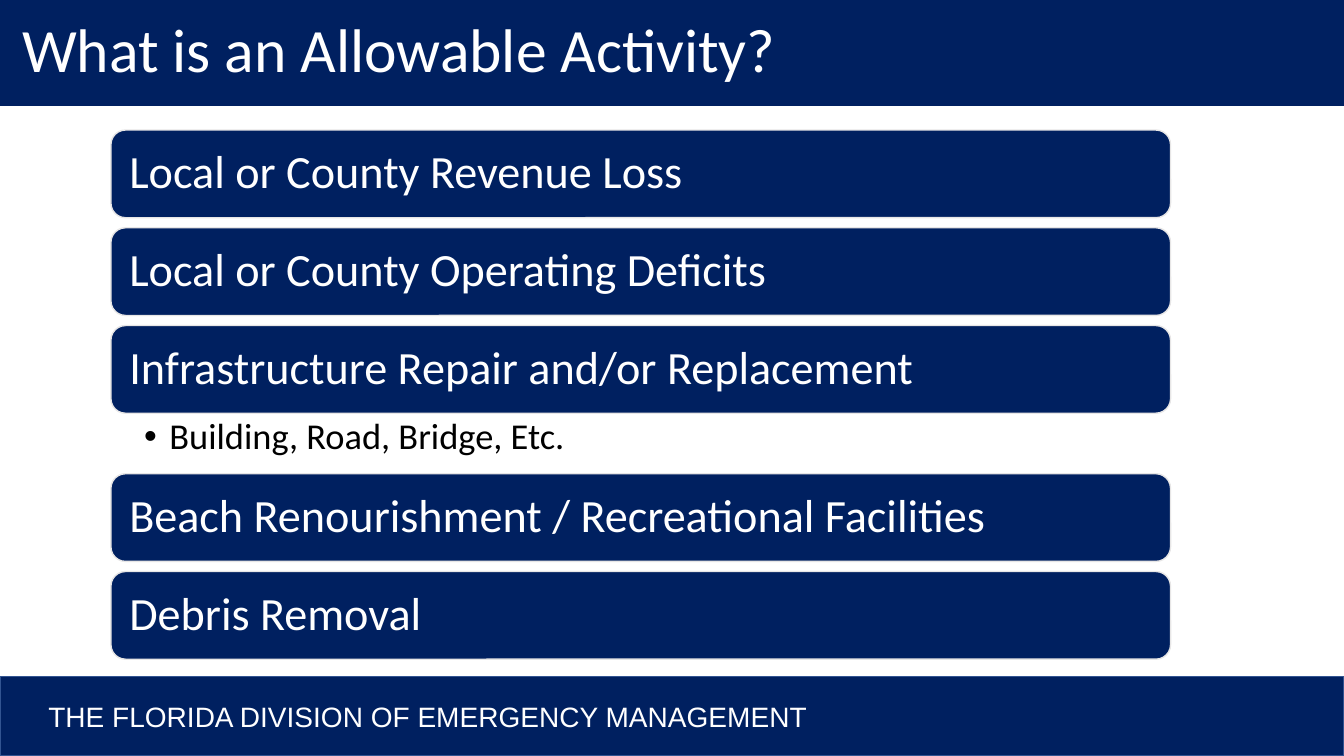
from lxml import etree
from pptx import Presentation
from pptx import util as u
from pptx.dml import color
from pptx.enum import shapes, text
from pptx.oxml import ns


class ActivityPage:
    """Holds the style and the current slide, and draws each kind of element."""

    colors = {"navy": "002060", "edge": "325491", "pale": "E7E6E6",
              "white": "FFFFFF", "black": "000000"}

    def __init__(self, page):
        self.page = page

    def color(self, name):
        return color.RGBColor.from_string(self.colors[name])

    def label(self, shape, words, size, ink, insets, font="Calibri", spacing=0.9):
        frame = shape.text_frame
        frame.word_wrap = True
        frame.text = words
        frame.margin_left, frame.margin_top, frame.margin_right, frame.margin_bottom = (
            u.Inches(inset) for inset in insets)
        para = frame.paragraphs[0]
        para.alignment = text.PP_ALIGN.LEFT
        para.line_spacing = spacing
        span = para.runs[0]
        span.font.name = font
        span.font.size = u.Pt(size)
        span.font.color.rgb = self.color(ink)
        return para

    def panel(self, kind, area, line=None):
        shape = self.page.shapes.add_shape(kind, *(u.Inches(side) for side in area))
        shape.shadow.inherit = False
        shape.fill.solid()
        shape.fill.fore_color.rgb = self.color("navy")
        if line:
            shape.line.color.rgb = self.color(line)
            shape.line.width = u.Pt(1)
        else:
            shape.line.fill.background()
        shape.text_frame.vertical_anchor = text.MSO_ANCHOR.MIDDLE
        return shape

    def band(self, area, words, size, indent, font, spacing, line=None):
        shape = self.panel(shapes.MSO_SHAPE.RECTANGLE, area, line)
        self.label(shape, words, size, "white", (indent, 0.05, 0.1, 0.05), font, spacing)

    def activity(self, area, words):
        shape = self.panel(shapes.MSO_SHAPE.ROUNDED_RECTANGLE, area, "pale")
        self.label(shape, words, 33, "white", (0.14,) * 4)

    def bullet(self, area, words):
        box = self.page.shapes.add_textbox(*(u.Inches(side) for side in area))
        para = self.label(box, words, 26, "black", (0.33, 0.05, 0.26, 0.05))
        properties = para._p.get_or_add_pPr()
        properties.set("marL", str(u.Inches(0.25)))
        properties.set("indent", str(u.Inches(-0.25)))
        etree.SubElement(properties, ns.qn("a:buFont")).set("typeface", "Arial")
        etree.SubElement(properties, ns.qn("a:buChar")).set("char", "•")


def main():
    deck = Presentation()
    deck.slide_width, deck.slide_height = u.Inches(13.33), u.Inches(7.5)
    page = ActivityPage(deck.slides.add_slide(deck.slide_layouts[6]))
    page.band((0, 6.71, 13.33, 0.79), "THE FLORIDA DIVISION OF EMERGENCY MANAGEMENT",
              20, 0.48, "Arial", 1.0, "edge")
    page.band((0, 0, 13.33, 1.05), "What is an Allowable Activity?",
              44, 0.22, "Calibri", 0.9)

    activities = [
        ("Local or County Revenue Loss", None),
        ("Local or County Operating Deficits", None),
        ("Infrastructure Repair and/or Replacement", "Building, Road, Bridge, Etc."),
        ("Beach Renourishment / Recreational Facilities", None),
        ("Debris Removal", None),
    ]
    left, top, width, height = 1.1, 1.29, 10.51, 0.87
    gap, detail_height = 0.1, 0.6
    for name, detail in activities:
        page.activity((left, top, width, height), name)
        top += height
        if detail:
            page.bullet((left, top, width, detail_height), detail)
            top += detail_height
        else:
            top += gap
    deck.save("out.pptx")


if __name__ == "__main__":
    main()
